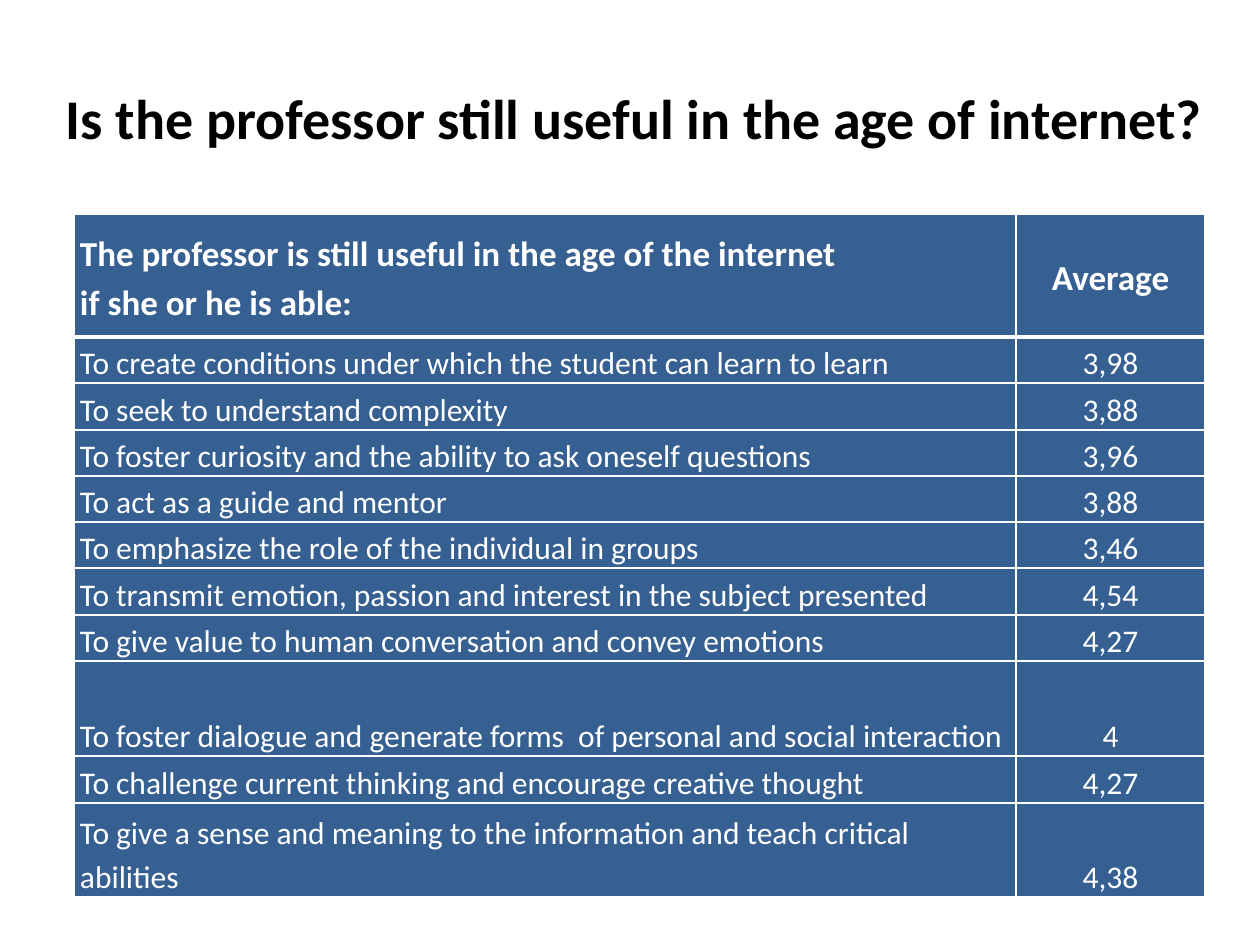
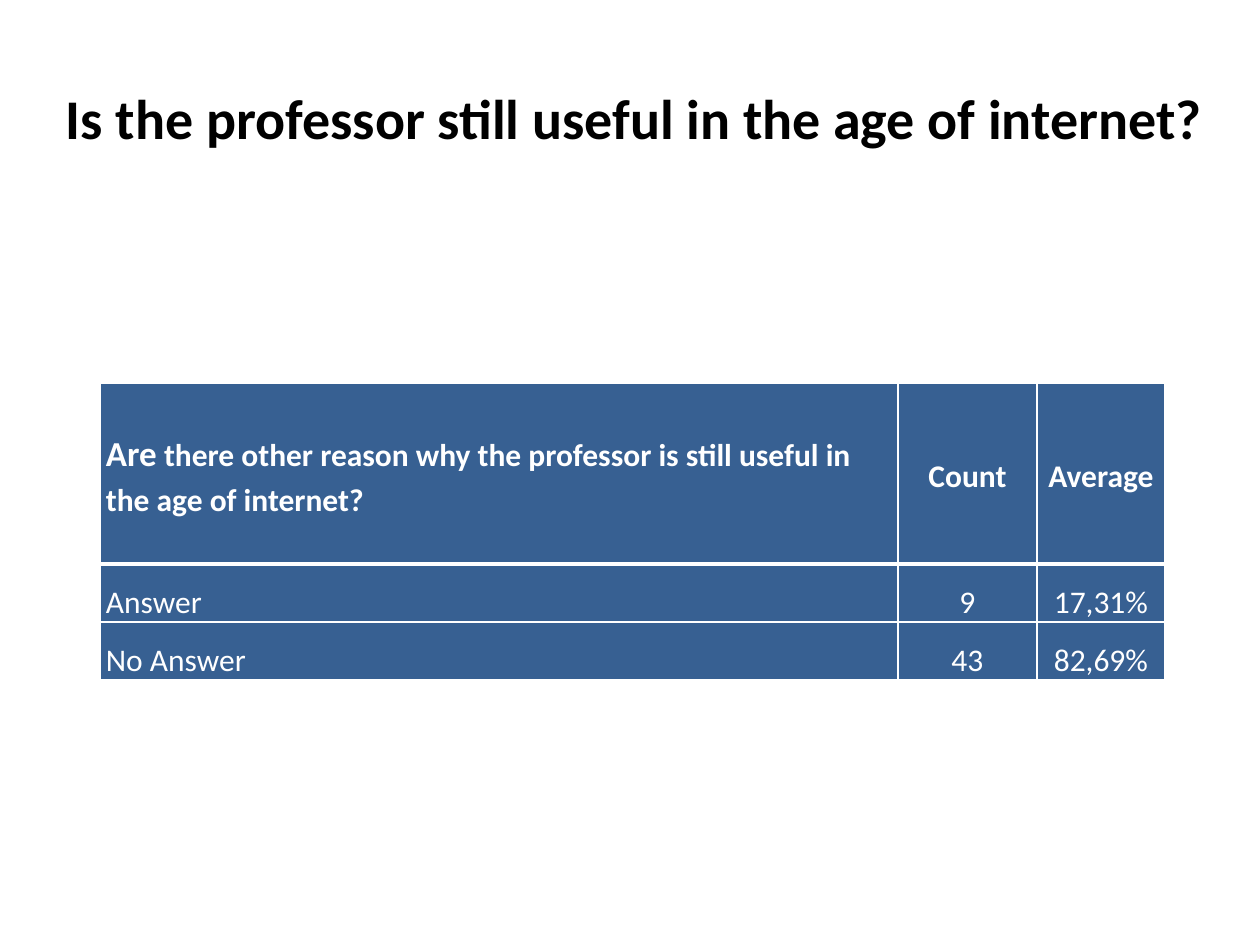
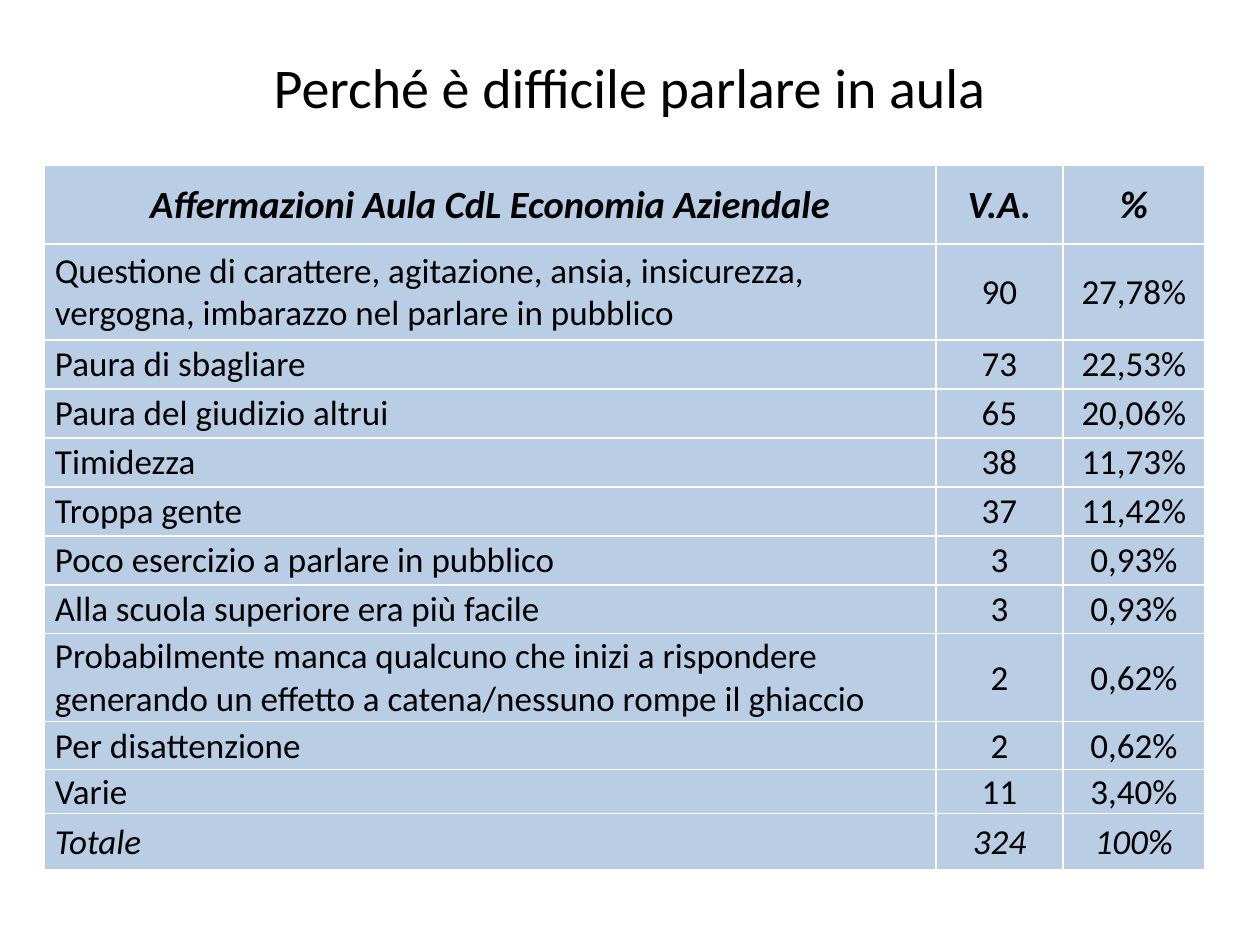
from dataclasses import dataclass

from lxml import etree
from pptx import Presentation
from pptx import util as u
from pptx.dml.color import RGBColor
from pptx.enum import text
from pptx.oxml.ns import qn

PX_PER_INCH = 126
FONT = "Calibri"
WHITE, BLACK = "FFFFFF", "000000"
DARK_BLUE, PALE_BLUE = "376092", "B9CDE5"
MIDDLE, BOTTOM = text.MSO_ANCHOR.MIDDLE, text.MSO_ANCHOR.BOTTOM
LEFT, CENTER = text.PP_ALIGN.LEFT, text.PP_ALIGN.CENTER


@dataclass(frozen=True)
class Box:
    left: int
    top: int
    width: int
    height: int


@dataclass(frozen=True)
class TextStyle:
    size: int
    color: str
    bold: bool = False
    italic: bool = False


@dataclass(frozen=True)
class TableStyle:
    fill: str
    header: TextStyle
    body: TextStyle
    total: TextStyle
    header_align: text.PP_ALIGN
    body_anchor: text.MSO_ANCHOR
    side_margin: int
    label_margin: int
    top_margin: int
    header_rule: int
    line_spacing: float


@dataclass(frozen=True)
class Grid:
    left: int
    top: int
    columns: list[int]
    heights: list[int]
    rows: list[tuple[str, ...]]


BODY_WHITE = TextStyle(18, WHITE)
BODY_BLACK = TextStyle(20, BLACK)
HEADER_WHITE = TextStyle(20, WHITE, bold=True)
SMALL_HEADER_WHITE = TextStyle(18, WHITE, bold=True)


def dark_style(header: TextStyle) -> TableStyle:
    return TableStyle(DARK_BLUE, header, BODY_WHITE, BODY_WHITE, LEFT, BOTTOM, 6, 6, 0, 3, 1.15)


PALE_STYLE = TableStyle(
    PALE_BLUE, TextStyle(22, BLACK, bold=True, italic=True), BODY_BLACK,
    TextStyle(20, BLACK, italic=True), CENTER, MIDDLE, 1, 11, 1, 1, 1.0)

PROFESSOR_TITLE = "Is the professor still useful in the age of internet?"
PROFESSOR_TITLE_BOX = Box(44, 38, 1181, 158)
SPEAKING_TITLE_BOX = Box(63, 38, 1134, 97)

ABILITIES = Grid(74, 214, [942, 189], [123, 46, 47, 46, 46, 46, 47, 46, 95, 47, 94], [
    ("The professor is still useful in the age of the internet\nif she or he is able:", "Average"),
    ("To create conditions under which the student can learn to learn", "3,98"),
    ("To seek to understand complexity", "3,88"),
    ("To foster curiosity and the ability to ask oneself questions", "3,96"),
    ("To act as a guide and mentor", "3,88"),
    ("To emphasize the role of the individual in groups", "3,46"),
    ("To transmit emotion, passion and interest in the subject presented", "4,54"),
    ("To give value to human conversation and convey emotions", "4,27"),
    ("To foster dialogue and generate forms  of personal and social interaction", "4"),
    ("To challenge current thinking and encourage creative thought", "4,27"),
    ("To give a sense and meaning to the information and teach critical abilities", "4,38"),
])

OTHER_REASONS = Grid(100, 383, [798, 139, 128], [181, 58, 58], [
    ("Are", "Count", "Average"),
    ("Answer", "9", "17,31%"),
    ("No Answer", "43", "82,69%"),
])
QUESTION_TAIL = " there other reason why the professor is still useful in the age of internet?"

SPEAKING = Grid(44, 165, [892, 127, 142], [79, 96, *[49] * 6, 88, 48, 44, 56], [
    ("Affermazioni Aula CdL Economia Aziendale", "V.A.", "%"),
    ("Questione di carattere, agitazione, ansia, insicurezza, vergogna, imbarazzo nel parlare "
     "in pubblico", "90", "27,78%"),
    ("Paura di sbagliare", "73", "22,53%"),
    ("Paura del giudizio altrui", "65", "20,06%"),
    ("Timidezza", "38", "11,73%"),
    ("Troppa gente", "37", "11,42%"),
    ("Poco esercizio a parlare in pubblico", "3", "0,93%"),
    ("Alla scuola superiore era più facile", "3", "0,93%"),
    ("Probabilmente manca qualcuno che inizi a rispondere generando un effetto a "
     "catena/nessuno rompe il ghiaccio", "2", "0,62%"),
    ("Per disattenzione", "2", "0,62%"),
    ("Varie", "11", "3,40%"),
    ("Totale", "324", "100%"),
])


def px(length: int) -> u.Emu:
    return u.Emu(round(length * u.Inches(1) / PX_PER_INCH))


def rgb(color: str) -> RGBColor:
    return RGBColor.from_string(color)


def style_span(span, style: TextStyle) -> None:
    font = span.font
    font.name = FONT
    font.size = u.Pt(style.size)
    font.bold = style.bold
    font.italic = style.italic
    font.color.rgb = rgb(style.color)


def style_paragraphs(frame, style: TextStyle, align, line_spacing: float = 1.0) -> None:
    for para in frame.paragraphs:
        para.alignment = align
        para.line_spacing = line_spacing
        for span in para.runs:
            style_span(span, style)


def draw_title(page, title: str, box: Box, bold: bool) -> None:
    shape = page.shapes.add_textbox(px(box.left), px(box.top), px(box.width), px(box.height))
    frame = shape.text_frame
    frame.word_wrap = True
    frame.vertical_anchor = MIDDLE
    frame.text = title
    style_paragraphs(frame, TextStyle(32, BLACK, bold=bold), CENTER)


def draw_borders(cell, top: int, bottom: int) -> None:
    """Rule the cell in white; this must precede its fill in the XML."""
    properties = cell._tc.get_or_add_tcPr()
    for side, points in (("L", 1), ("R", 1), ("T", top), ("B", bottom)):
        line = etree.SubElement(properties, qn(f"a:ln{side}"), w=str(u.Pt(points)))
        fill = etree.SubElement(line, qn("a:solidFill"))
        etree.SubElement(fill, qn("a:srgbClr"), val=WHITE)


def draw_table(page, grid: Grid, style: TableStyle):
    row_count, column_count = len(grid.rows), len(grid.columns)
    table = page.shapes.add_table(
        row_count, column_count, px(grid.left), px(grid.top),
        px(sum(grid.columns)), px(sum(grid.heights))).table
    for column, width in zip(table.columns, grid.columns):
        column.width = px(width)
    for row, height in zip(table.rows, grid.heights):
        row.height = px(height)

    for r, values in enumerate(grid.rows):
        is_header = r == 0
        if is_header:
            text_style = style.header
        else:
            text_style = style.total if r == row_count - 1 else style.body
        for c, value in enumerate(values):
            is_label = c == 0 and not is_header
            cell = table.cell(r, c)
            draw_borders(cell, top=style.header_rule if r == 1 else 1,
                         bottom=style.header_rule if is_header else 1)
            cell.fill.solid()
            cell.fill.fore_color.rgb = rgb(style.fill)
            cell.margin_left = px(style.label_margin if is_label else style.side_margin)
            cell.margin_right = px(style.side_margin)
            cell.margin_top = px(style.top_margin)
            cell.margin_bottom = 0
            cell.vertical_anchor = MIDDLE if is_header else style.body_anchor
            cell.text_frame.text = value
            first_align = style.header_align if is_header else LEFT
            style_paragraphs(cell.text_frame, text_style,
                             first_align if c == 0 else CENTER, style.line_spacing)
    return table


def main() -> None:
    deck = Presentation()
    deck.slide_width, deck.slide_height = u.Inches(10), u.Inches(7.5)
    blank = deck.slide_layouts[6]

    page = deck.slides.add_slide(blank)
    draw_title(page, PROFESSOR_TITLE, PROFESSOR_TITLE_BOX, bold=True)
    draw_table(page, ABILITIES, dark_style(HEADER_WHITE))

    page = deck.slides.add_slide(blank)
    draw_title(page, PROFESSOR_TITLE, PROFESSOR_TITLE_BOX, bold=True)
    table = draw_table(page, OTHER_REASONS, dark_style(SMALL_HEADER_WHITE))
    question = table.cell(0, 0).text_frame.paragraphs[0]
    style_span(question.runs[0], HEADER_WHITE)
    tail = question.add_run()
    tail.text = QUESTION_TAIL
    style_span(tail, SMALL_HEADER_WHITE)

    page = deck.slides.add_slide(blank)
    draw_title(page, "Perché è difficile parlare in aula", SPEAKING_TITLE_BOX, bold=False)
    draw_table(page, SPEAKING, PALE_STYLE)

    deck.save("out.pptx")


if __name__ == "__main__":
    main()
